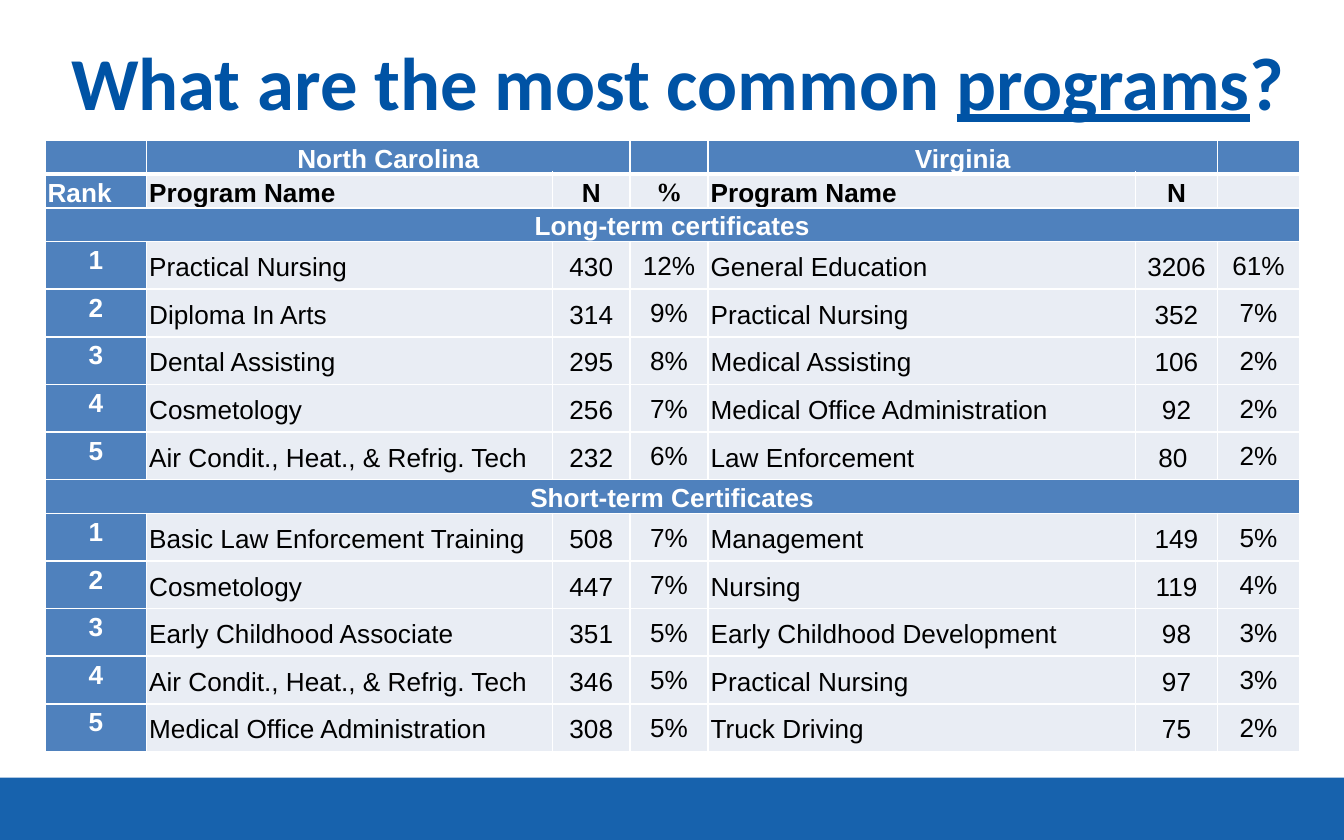
"""Build a slide that ranks the most common certificate programs in two states."""
from lxml.etree import SubElement
from pptx import Presentation
from pptx.dml.color import RGBColor
from pptx.enum.shapes import MSO_SHAPE
from pptx.enum.text import MSO_ANCHOR, PP_ALIGN
from pptx.oxml import parse_xml
from pptx.oxml.ns import nsdecls, qn
from pptx.util import Cm, Pt

COLORS = {"navy": "0053A5", "blue": "4F81BD", "pale": "E9EDF4", "white": "FFFFFF", "black": "000000"}


def add_run(para, text, size, font, color, bold):
    run = para.add_run()
    run.text = text
    run.font.size = Pt(size)
    run.font.name = font
    run.font.bold = bold
    run.font.color.rgb = RGBColor.from_string(COLORS[color])
    return run


def set_edge(cell, side, width):
    props = cell._tc.get_or_add_tcPr()
    line = parse_xml(
        f'<a:{side} {nsdecls("a")} w="{Pt(width)}"><a:solidFill>'
        f'<a:srgbClr val="{COLORS["white"]}"/></a:solidFill></a:{side}>'
    )
    props.insert(["lnL", "lnR", "lnT", "lnB"].index(side), line)


deck = Presentation()
deck.slide_width, deck.slide_height = Cm(25.4), Cm(15.88)
slide = deck.slides.add_slide(deck.slide_layouts[6])

band = slide.shapes.add_shape(MSO_SHAPE.RECTANGLE, 0, Cm(14.7), deck.slide_width, Cm(1.18))
band.shadow.inherit = False
band.line.fill.background()
band.fill.solid()
band.fill.fore_color.rgb = RGBColor.from_string(COLORS["navy"])
tint = band.fill._xPr.find(qn("a:solidFill"))[0]
SubElement(tint, qn("a:alpha"), val="91000")

long_term = [
    ("1", "Practical Nursing", "430", "12%", "General Education", "3206", "61%"),
    ("2", "Diploma In Arts", "314", "9%", "Practical Nursing", "352", "7%"),
    ("3", "Dental Assisting", "295", "8%", "Medical Assisting", "106", "2%"),
    ("4", "Cosmetology", "256", "7%", "Medical Office Administration", "92", "2%"),
    ("5", "Air Condit., Heat., & Refrig. Tech", "232", "6%", "Law Enforcement", "80 ", "2%"),
]
short_term = [
    ("1", "Basic Law Enforcement Training", "508", "7%", "Management", "149", "5%"),
    ("2", "Cosmetology", "447", "7%", "Nursing", "119", "4%"),
    ("3", "Early Childhood Associate", "351", "5%", "Early Childhood Development", "98", "3%"),
    ("4", "Air Condit., Heat., & Refrig. Tech", "346", "5%", "Practical Nursing", "97", "3%"),
    ("5", "Medical Office Administration", "308", "5%", "Truck Driving", "75", "2%"),
]
rows = [
    ("", "North Carolina", "", "", "Virginia", "", ""),
    ("Rank", "Program Name", "N", "%", "Program Name", "N", ""),
    ("Long-term certificates",) + ("",) * 6,
    *long_term,
    ("Short-term Certificates",) + ("",) * 6,
    *short_term,
]
bars = (2, 3 + len(long_term))
heads = (0, 1) + bars
widths = [1.92, 7.67, 1.47, 1.47, 8.08, 1.55, 1.55]

frame = slide.shapes.add_table(len(rows), len(widths), Cm(0.85), Cm(2.65), Cm(sum(widths)), Cm(11.2))
table = frame.table
table.first_row = table.horz_banding = False
for col, width in zip(table.columns, widths):
    col.width = Cm(width)

for r, row in enumerate(rows):
    table.rows[r].height = Cm(0.53 if r in heads else 0.9)
    for c, text in enumerate(row):
        cell = table.cell(r, c)
        dark = c == 0 or r == 0 or r in bars
        rate = c in (3, 6) and r not in heads
        cell.fill.solid()
        cell.fill.fore_color.rgb = RGBColor.from_string(COLORS["blue" if dark else "pale"])
        cell.margin_left = cell.margin_right = Cm(0.03 if rate else 0.05)
        cell.margin_top = Cm(0.03 if rate else 0)
        cell.margin_bottom = 0
        if r == bars[1] or (c and r not in heads):
            cell.vertical_anchor = MSO_ANCHOR.MIDDLE
        for side in ("lnL", "lnR", "lnT", "lnB"):
            thick = (r, side) in ((0, "lnB"), (1, "lnT"))
            set_edge(cell, side, 3 if thick else 1)

        para = cell.text_frame.paragraphs[0]
        if not text:
            SubElement(para._p, qn("a:endParaRPr"), sz="1400")
            continue
        para.alignment = PP_ALIGN.CENTER
        if text == "Rank" or (c in (1, 4) and r > 0):
            para.alignment = PP_ALIGN.JUSTIFY if c == 4 and 2 < r < bars[1] else PP_ALIGN.LEFT
        if not rate:
            para.line_spacing = 1.15
        font = "Times New Roman" if text == "%" else "Arial"
        add_run(para, text, 14, font, "white" if dark else "black", dark or r in heads)

for c in (1, 4):
    table.cell(0, c).merge(table.cell(0, c + 1))
for r in bars:
    table.cell(r, 0).merge(table.cell(r, len(widths) - 1))

title = slide.shapes.add_textbox(Cm(0.85), Cm(0.2), Cm(23.92), Cm(2.65)).text_frame
title.word_wrap = True
title.vertical_anchor = MSO_ANCHOR.MIDDLE
para = title.paragraphs[0]
para.alignment = PP_ALIGN.CENTER
for text, under in (("What are the most common ", False), ("programs", True), ("?", False)):
    add_run(para, text, 40, "Calibri", "navy", True).font.underline = under

deck.save("out.pptx")
